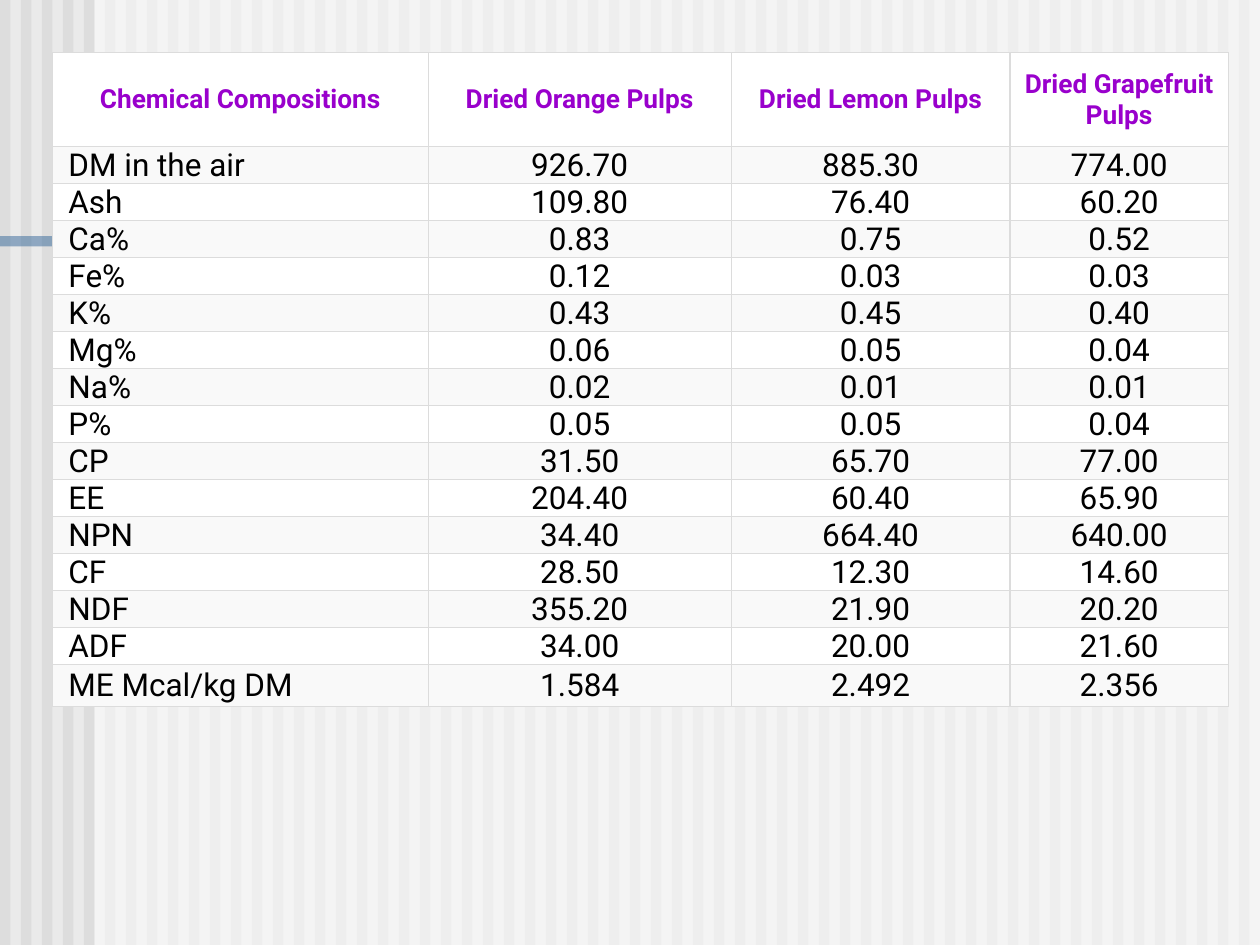
from lxml import etree
from pptx import Presentation
from pptx import util as u
from pptx.dml.color import RGBColor
from pptx.enum import shapes, text
from pptx.oxml import ns

HEADERS = ["Chemical Compositions", "Dried Orange Pulps", "Dried Lemon Pulps",
           "Dried Grapefruit Pulps"]
COMPOSITIONS = [
    ("DM in the air", "926.70", "885.30", "774.00"),
    ("Ash", "109.80", "76.40", "60.20"),
    ("Ca%", "0.83", "0.75", "0.52"),
    ("Fe%", "0.12", "0.03", "0.03"),
    ("K%", "0.43", "0.45", "0.40"),
    ("Mg%", "0.06", "0.05", "0.04"),
    ("Na%", "0.02", "0.01", "0.01"),
    ("P%", "0.05", "0.05", "0.04"),
    ("CP", "31.50", "65.70", "77.00"),
    ("EE", "204.40", "60.40", "65.90"),
    ("NPN", "34.40", "664.40", "640.00"),
    ("CF", "28.50", "12.30", "14.60"),
    ("NDF", "355.20", "21.90", "20.20"),
    ("ADF", "34.00", "20.00", "21.60"),
    ("ME Mcal/kg DM", "1.584", "2.492", "2.356"),
]

THEME = {
    "background": "EAEAEA", "stripe": "DDDDDD", "veil": "FFFFFF", "accent": "336699",
    "rows": ("FFFFFF", "F9F9F9"), "border": "DCDCDC", "border_width": u.Pt(0.75),
    "header": {"name": "Roboto", "size": u.Pt(15), "bold": True},
    "header_color": "9900CC",
    "body": {"name": "Roboto", "size": u.Pt(18), "bold": False},
    "body_color": "000000",
}

SLIDE_W, SLIDE_H = 25.4, 19.05
STRIPES = 60
TABLE_LEFT, TABLE_TOP, TABLE_H = 1.06, 1.06, 13.41
COLUMN_WIDTHS = [7.57, 6.11, 5.62, 4.4]
HEADER_H, ROW_H, LAST_ROW_H = 1.9, 0.64, 0.83
LABEL_INDENT = 0.32


def set_all(target, values):
    for name, value in values.items():
        setattr(target, name, value)


def add_rect(page, left, top, width, height, color, opacity=100):
    rect = page.shapes.add_shape(shapes.MSO_SHAPE.RECTANGLE,
                                 *map(u.Cm, (left, top, width, height)))
    rect.shadow.inherit = False
    rect.line.fill.background()
    rect.fill.solid()
    rect.fill.fore_color.rgb = RGBColor.from_string(color)
    if opacity < 100:
        tint = rect.fill._xPr.find(".//" + ns.qn("a:srgbClr"))
        etree.SubElement(tint, ns.qn("a:alpha"), val=str(opacity * 1000))


def add_borders(cell):
    """Outline all four sides; border elements must come before the fill."""
    properties = cell._tc.get_or_add_tcPr()
    for index, side in enumerate(("lnL", "lnR", "lnT", "lnB")):
        line = etree.Element(ns.qn("a:" + side), w=str(int(THEME["border_width"])))
        fill = etree.SubElement(line, ns.qn("a:solidFill"))
        etree.SubElement(fill, ns.qn("a:srgbClr"), val=THEME["border"])
        properties.insert(index, line)


def fill_cell(cell, wording, row, column):
    is_label = row > 0 and column == 0
    kind = "body" if row else "header"
    set_all(cell, {
        "margin_left": u.Cm(LABEL_INDENT if is_label else 0),
        "margin_right": 0, "margin_top": 0, "margin_bottom": 0,
        "vertical_anchor": text.MSO_ANCHOR.MIDDLE,
    })
    cell.fill.solid()
    cell.fill.fore_color.rgb = RGBColor.from_string(THEME["rows"][row % 2])
    add_borders(cell)
    para = cell.text_frame.paragraphs[0]
    para.alignment = text.PP_ALIGN.JUSTIFY if is_label else text.PP_ALIGN.CENTER
    span = para.add_run()
    span.text = wording
    set_all(span.font, THEME[kind])
    span.font.color.rgb = RGBColor.from_string(THEME[kind + "_color"])


def add_backdrop(page):
    page.background.fill.solid()
    page.background.fill.fore_color.rgb = RGBColor.from_string(THEME["background"])
    pitch = SLIDE_W / STRIPES
    for index in range(STRIPES):
        add_rect(page, index * pitch, 0, pitch / 2, SLIDE_H, THEME["stripe"])
    veil_left = 4.5 * pitch
    add_rect(page, veil_left, 0, SLIDE_W - veil_left, SLIDE_H, THEME["veil"], 50)
    add_rect(page, 0, 4.76, 19.3, 0.21, THEME["accent"], 50)


def add_composition_table(page):
    rows = [HEADERS, *COMPOSITIONS]
    frame = page.shapes.add_table(
        len(rows), len(HEADERS), u.Cm(TABLE_LEFT), u.Cm(TABLE_TOP),
        u.Cm(sum(COLUMN_WIDTHS)), u.Cm(TABLE_H))
    table = frame.table
    for column, width in zip(table.columns, COLUMN_WIDTHS):
        column.width = u.Cm(width)
    heights = [HEADER_H] + [ROW_H] * (len(COMPOSITIONS) - 1) + [LAST_ROW_H]
    for row, height in zip(table.rows, heights):
        row.height = u.Cm(height)
    frame.height = u.Cm(TABLE_H)
    for r, wordings in enumerate(rows):
        for c, wording in enumerate(wordings):
            fill_cell(table.cell(r, c), wording, r, c)


def main():
    deck = Presentation()
    set_all(deck, {"slide_width": u.Cm(SLIDE_W), "slide_height": u.Cm(SLIDE_H)})
    page = deck.slides.add_slide(deck.slide_layouts[6])
    add_backdrop(page)
    add_composition_table(page)
    deck.save("out.pptx")


if __name__ == "__main__":
    main()
